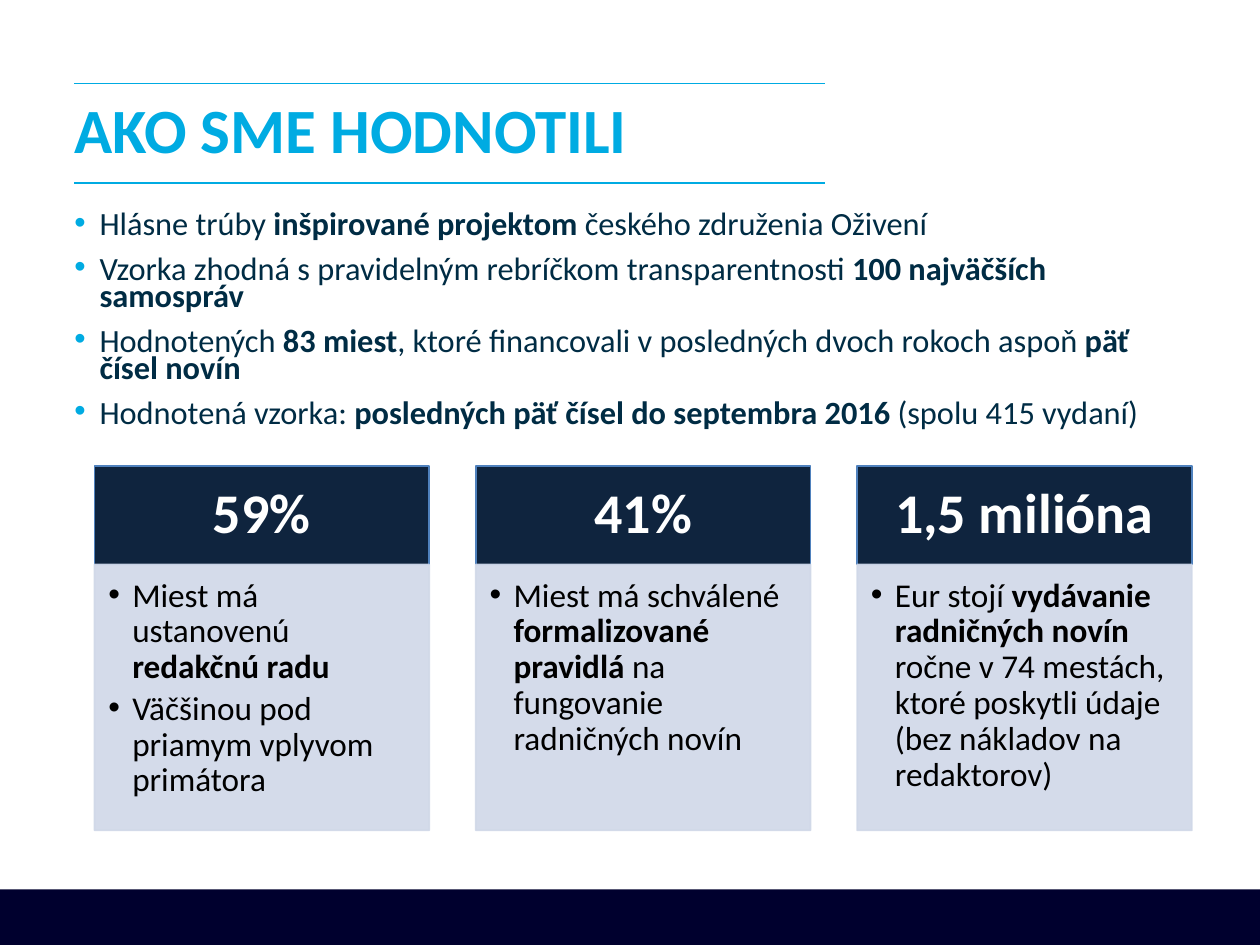
from collections import namedtuple
from dataclasses import dataclass

from lxml.etree import SubElement
from pptx import Presentation
from pptx.dml.color import RGBColor
from pptx.enum.shapes import MSO_CONNECTOR, MSO_SHAPE
from pptx.enum.text import MSO_ANCHOR, MSO_AUTO_SIZE, PP_ALIGN
from pptx.oxml.ns import qn
from pptx.util import Inches, Pt

Box = namedtuple("Box", "x y w h")


@dataclass(frozen=True)
class Theme:
    font: str = "Calibri"
    accent: str = "00ABE2"
    body: str = "002C44"
    footer: str = "00002E"
    head: str = "0F243E"
    head_line: str = "4F81BD"
    panel: str = "D0D8E8"
    white: str = "FFFFFF"
    black: str = "000000"
    title_size: float = 36
    body_size: float = 18.5
    head_size: float = 32
    panel_size: float = 19


THEME = Theme()
TITLE = "AKO SME HODNOTILI"
# Each paragraph is a list of pieces that alternate regular and bold.
POINTS = [
    ["Hlásne trúby ", "inšpirované projektom ", "českého združenia Oživení"],
    ["Vzorka zhodná s pravidelným rebríčkom transparentnosti ",
     "100 najväčších samospráv"],
    ["Hodnotených ", "83 miest",
     ", ktoré financovali v posledných dvoch rokoch aspoň ", "päť čísel novín"],
    ["Hodnotená vzorka:", " posledných päť čísel do septembra 2016 ",
     "(spolu 415 vydaní)"],
]
CARDS = [
    ("59%", [["Miest má ustanovenú ", "redakčnú radu"],
             ["Väčšinou pod priamym vplyvom primátora"]]),
    ("41%", [["Miest má schválené ", "formalizované pravidlá ",
              "na fungovanie radničných novín"]]),
    ("1,5 milióna", [["Eur stojí ", "vydávanie radničných novín ",
                      "ročne v 74 mestách, ktoré poskytli údaje "
                      "(bez nákladov na redaktorov)"]]),
]


def rgb(color):
    return RGBColor.from_string(color)


def inches(box):
    return [Inches(v) for v in box]


def style(r, size, color, bold):
    r.font.name, r.font.size, r.font.bold = THEME.font, Pt(size), bold
    r.font.color.rgb = rgb(color)


def set_frame(tf, margins, anchor=MSO_ANCHOR.TOP):
    tf.word_wrap, tf.auto_size = True, MSO_AUTO_SIZE.NONE
    tf.vertical_anchor = anchor
    (tf.margin_left, tf.margin_top,
     tf.margin_right, tf.margin_bottom) = inches(margins)


def add_bullet(p, indent, color):
    pPr = p._p.get_or_add_pPr()
    pPr.set("marL", str(Inches(indent)))
    pPr.set("indent", str(-Inches(indent)))
    clr = SubElement(pPr, qn("a:buClr"))
    SubElement(clr, qn("a:srgbClr"), val=color)
    SubElement(pPr, qn("a:buFont"), typeface="Arial")
    SubElement(pPr, qn("a:buChar"), char="•")


def fill_bullets(tf, paragraphs, size, color, bullet, indent, spacing,
                 before=0, after=0):
    for i, pieces in enumerate(paragraphs):
        p = tf.add_paragraph() if i else tf.paragraphs[0]
        add_bullet(p, indent, bullet)
        p.alignment, p.line_spacing = PP_ALIGN.LEFT, spacing
        p.space_before, p.space_after = Pt(before if i else 0), Pt(after)
        for j, piece in enumerate(pieces):
            r = p.add_run()
            r.text = piece
            style(r, size, color, j % 2 == 1)


def add_rect(slide, box, fill, line=None, opacity=100):
    s = slide.shapes.add_shape(MSO_SHAPE.RECTANGLE, *inches(box))
    s.shadow.inherit = False
    s.fill.solid()
    s.fill.fore_color.rgb = rgb(fill)
    if line:
        s.line.color.rgb, s.line.width = rgb(line), Pt(1)
    else:
        s.line.fill.background()
    if opacity < 100:
        for clr in s._element.spPr.iter(qn("a:srgbClr")):
            SubElement(clr, qn("a:alpha"), val=str(opacity * 1000))
    return s


def add_rule(slide, x, y, w):
    line = slide.shapes.add_connector(
        MSO_CONNECTOR.STRAIGHT, *inches((x, y, x + w, y)))
    line.line.color.rgb, line.line.width = rgb(THEME.accent), Pt(1)
    SubElement(line._element.spPr, qn("a:effectLst"))


def add_title(slide, box):
    for y in (box.y + 0.05 * box.h, box.y + 0.96 * box.h):
        add_rule(slide, box.x, y, 0.86 * box.w)
    title = slide.shapes.title
    title.left, title.top, title.width, title.height = inches(box)
    tf = title.text_frame
    tf.text = TITLE
    set_frame(tf, (0, 0, 0, 0), MSO_ANCHOR.MIDDLE)
    p = tf.paragraphs[0]
    p.alignment, p.line_spacing = PP_ALIGN.LEFT, 0.9
    style(p.runs[0], THEME.title_size, THEME.accent, True)


def add_points(slide, box):
    tf = slide.shapes.add_textbox(*inches(box)).text_frame
    set_frame(tf, (0, 0, 0.1, 0))
    fill_bullets(tf, POINTS, THEME.body_size, THEME.body, THEME.accent,
                 indent=0.2, spacing=0.7, before=10)


def add_card(slide, box, heading, paragraphs):
    head_h = 0.27 * box.h
    head = add_rect(slide, box._replace(h=head_h), THEME.head, THEME.head_line)
    tf = head.text_frame
    tf.text = heading
    set_frame(tf, (0.25, 0.14, 0.25, 0.14), MSO_ANCHOR.MIDDLE)
    p = tf.paragraphs[0]
    p.alignment, p.line_spacing = PP_ALIGN.CENTER, 0.9
    style(p.runs[0], THEME.head_size, THEME.white, True)

    panel = add_rect(slide, Box(box.x, box.y + head_h, box.w, box.h - head_h),
                     THEME.panel, THEME.panel, opacity=90)
    set_frame(panel.text_frame, (0.11, 0.11, 0.15, 0.17))
    fill_bullets(panel.text_frame, paragraphs, THEME.panel_size, THEME.black,
                 THEME.black, indent=0.19, spacing=0.9, after=3)


def add_cards(slide, box, gap):
    w = (box.w - gap * (len(CARDS) - 1)) / len(CARDS)
    for i, (heading, paragraphs) in enumerate(CARDS):
        card = Box(box.x + i * (w + gap), box.y, w, box.h)
        add_card(slide, card, heading, paragraphs)


def main():
    prs = Presentation()
    width, height = 10, 7.5
    prs.slide_width, prs.slide_height = Inches(width), Inches(height)
    slide = prs.slides.add_slide(prs.slide_layouts[5])
    left, footer_h = 0.59, 0.44
    add_rect(slide, Box(0, height - footer_h, width, footer_h), THEME.footer)
    add_title(slide, Box(left, 0.62, 6.93, 0.87))
    add_points(slide, Box(left, 1.7, 8.9, 1.89))
    add_cards(slide, Box(0.75, 3.7, 8.71, 2.89), gap=0.37)
    prs.save("out.pptx")


if __name__ == "__main__":
    main()
